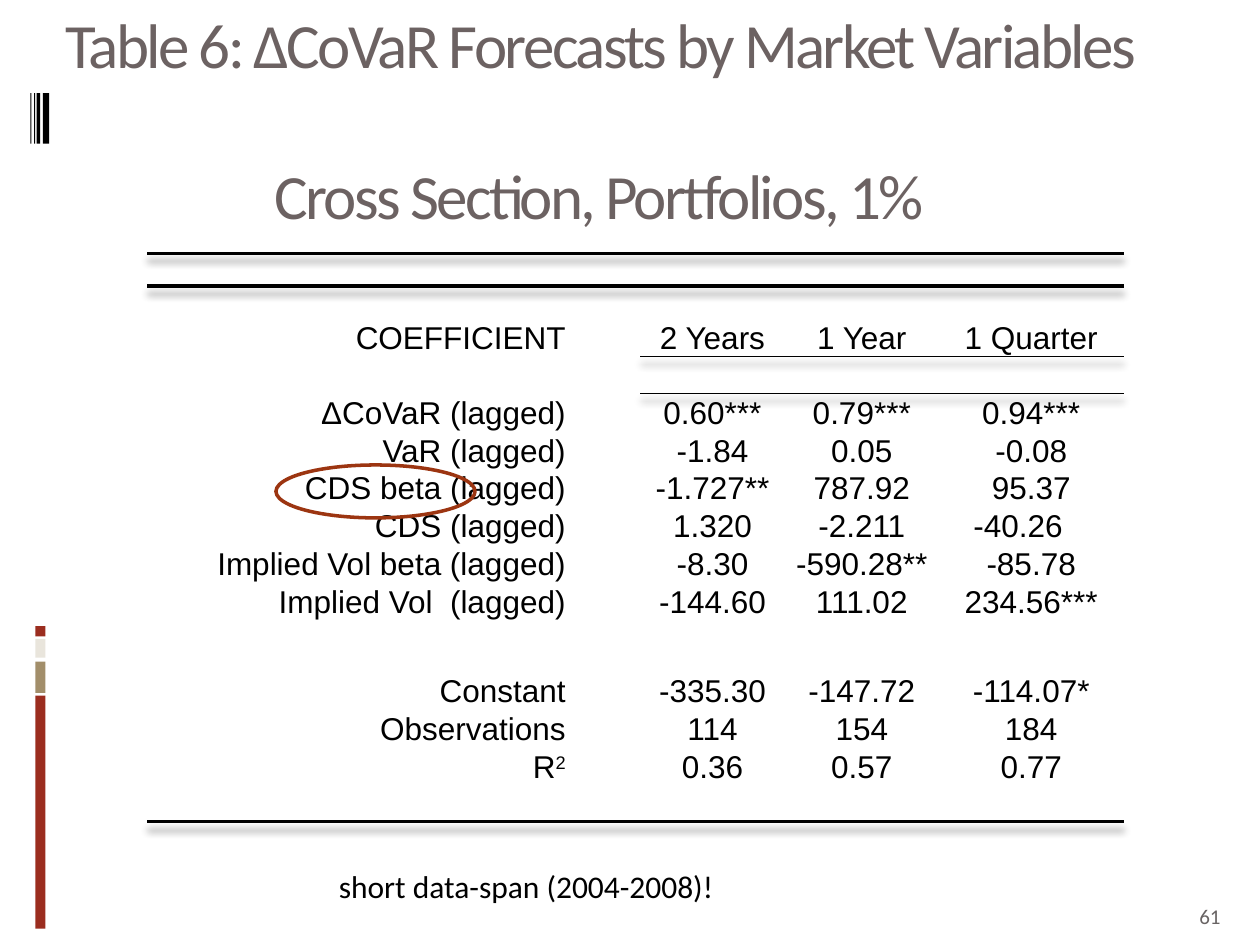
from dataclasses import dataclass

from lxml.etree import SubElement
from pptx import Presentation
from pptx.dml.color import RGBColor as RGB
from pptx.enum.shapes import MSO_SHAPE as Shape
from pptx.enum.text import MSO_ANCHOR as Anchor, MSO_AUTO_SIZE as Fit, PP_ALIGN as Align
from pptx.oxml import parse_xml
from pptx.oxml.ns import nsdecls, qn
from pptx.util import Inches, Pt


@dataclass(frozen=True)
class Theme:
    ink: RGB = RGB.from_string("000000")
    title: RGB = RGB.from_string("6C6262")
    number: RGB = RGB.from_string("696464")
    red: RGB = RGB.from_string("9B2D1F")
    tan: RGB = RGB.from_string("A28E6A")
    cream: RGB = RGB.from_string("E9E5DC")
    ring: RGB = RGB.from_string("9C3511")
    head: str = "Calibri"
    body: str = "Arial"
    title_size: int = 36
    text_size: int = 18
    note_size: int = 12


theme = Theme()


def style(para, face, size, color):
    para.font.name = face
    para.font.size = Pt(size)
    para.font.color.rgb = color


def rule(row, cols, side, width):
    """Draw a black border on one side ("T" or "B") of a row's cells."""
    for col in cols:
        props = table.cell(row, col)._tc.get_or_add_tcPr()
        line = parse_xml(
            f'<a:ln{side} {nsdecls("a")} w="{Pt(width)}"><a:solidFill>'
            f'<a:srgbClr val="{theme.ink}"/></a:solidFill></a:ln{side}>')
        props.insert(0, line)


deck = Presentation()
deck.slide_width, deck.slide_height = Inches(10), Inches(7.5)
slide = deck.slides.add_slide(deck.slide_layouts[5])
shapes = slide.shapes

# Side bars: left, top, width, height, colour
bars = [
    (0.28, 5.52, 0.08, 1.85, theme.red),
    (0.28, 5.25, 0.08, 0.25, theme.tan),
    (0.28, 5.07, 0.08, 0.15, theme.cream),
    (0.28, 4.97, 0.08, 0.08, theme.red),
]
bars += [(left, 0.74, width, 0.4, theme.ink)
         for left, width in ((0.34, 0.05), (0.29, 0.03), (0.27, 0.01), (0.24, 0.01))]
for *place, color in bars:
    bar = shapes.add_shape(Shape.RECTANGLE, *map(Inches, place))
    bar.shadow.inherit = False
    bar.fill.solid()
    bar.fill.fore_color.rgb = color
    bar.line.fill.background()

# Title
title = shapes.title
title.left, title.top = Inches(0.42), Inches(0.23)
title.width, title.height = Inches(9.58), Inches(1.42)
frame = title.text_frame
frame.text = ("Table 6: ΔCoVaR Forecasts by Market Variables\n"
              "Cross Section, Portfolios, 1%")
frame.auto_size = Fit.NONE
frame.vertical_anchor = Anchor.MIDDLE
for para in frame.paragraphs:
    para.alignment = Align.LEFT
    style(para, theme.head, theme.title_size, theme.title)
    for run in para.runs:
        run.font._element.set("spc", "-150")
second = frame.paragraphs[1]
second.space_before = Pt(43)
second._p.get_or_add_pPr().set("marL", str(Inches(1.66)))

# Slide number
box = shapes.add_textbox(Inches(9.42), Inches(7.02), Inches(0.5), Inches(0.4))
box.text_frame.word_wrap = True
box.text_frame.vertical_anchor = Anchor.BOTTOM
box.text_frame.text = "61"
style(box.text_frame.paragraphs[0], theme.head, theme.note_size, theme.number)

# Regression table: row number -> label and one value per horizon
data = {
    2: ("COEFFICIENT", "2 Years", "1 Year", "1 Quarter"),
    4: ("ΔCoVaR (lagged)", "0.60***", "0.79***", "0.94***"),
    5: ("VaR (lagged)", "-1.84", "0.05", "-0.08"),
    6: ("CDS beta (lagged)", "-1.727**", "787.92", "95.37"),
    7: ("CDS (lagged)", "1.320", "-2.211", "-40.26"),
    8: ("Implied Vol beta (lagged)", "-8.30", "-590.28**", "-85.78"),
    9: ("Implied Vol  (lagged)", "-144.60", "111.02", "234.56***"),
    11: ("Constant", "-335.30", "-147.72", "-114.07*"),
    12: ("Observations", "114", "154", "184"),
    13: ("R", "0.36", "0.57", "0.77"),
}
widths = [3.32, 0.59, 1.15, 1.22, 1.47]
heights = [0.26, 0.26, 0.56] + [0.29] * 7 + [0.41] + [0.29] * 4 + [0.26]
table = shapes.add_table(len(heights), len(widths), Inches(1.17), Inches(1.75),
                         Inches(sum(widths)), Inches(sum(heights))).table
table.first_row = table.horz_banding = False
for col, width in zip(table.columns, widths):
    col.width = Inches(width)
for row, height in zip(table.rows, heights):
    row.height = Inches(height)

props = table._tbl.tblPr
props.find(qn("a:tableStyleId")).text = "{2D5ABB26-0587-4C30-8999-92F81FD0307C}"
props.insert(0, parse_xml(
    f'<a:effectLst {nsdecls("a")}><a:outerShdw blurRad="50800" dist="57150" '
    f'dir="5400000" rotWithShape="0"><a:srgbClr val="{theme.ink}">'
    '<a:alpha val="45000"/></a:srgbClr></a:outerShdw></a:effectLst>'))

for cell in table.iter_cells():
    cell.fill.background()
    cell.vertical_anchor = Anchor.BOTTOM
    cell.margin_left = cell.margin_right = cell.margin_top = cell.margin_bottom = 0
    style(cell.text_frame.paragraphs[0], theme.body, theme.note_size, theme.ink)

for row, texts in data.items():
    for col, text in zip((0, 2, 3, 4), texts):
        para = table.cell(row, col).text_frame.paragraphs[0]
        para.add_run().text = text
        para.alignment = Align.CENTER if col else Align.RIGHT
        style(para, theme.body, theme.text_size, theme.ink)
power = table.cell(13, 0).text_frame.paragraphs[0].add_run()
power.text = "2"
power.font._element.set("baseline", "30000")
table.cell(7, 4).margin_right = Inches(0.21)

for above, cols, width in ((0, range(5), 2), (2, range(2, 5), 0.5), (14, range(5), 2)):
    rule(above, cols, "B", width)
    rule(above + 1, cols, "T", width)

# Remark below the table
note = shapes.add_textbox(Inches(2.59), Inches(6.83), Inches(3.21), Inches(0.4))
note.text_frame.word_wrap = False
note.text_frame.auto_size = Fit.SHAPE_TO_FIT_TEXT
note.text_frame.text = "short data-span (2004-2008)!"
style(note.text_frame.paragraphs[0], theme.head, theme.text_size, theme.ink)

# Ring around the CDS beta label
ring = shapes.add_shape(Shape.OVAL, Inches(2.19), Inches(3.69), Inches(1.58), Inches(0.42))
ring.shadow.inherit = False
ring.fill.background()
ring.line.color.rgb = theme.ring
ring.line.width = Pt(2)

deck.save("out.pptx")
